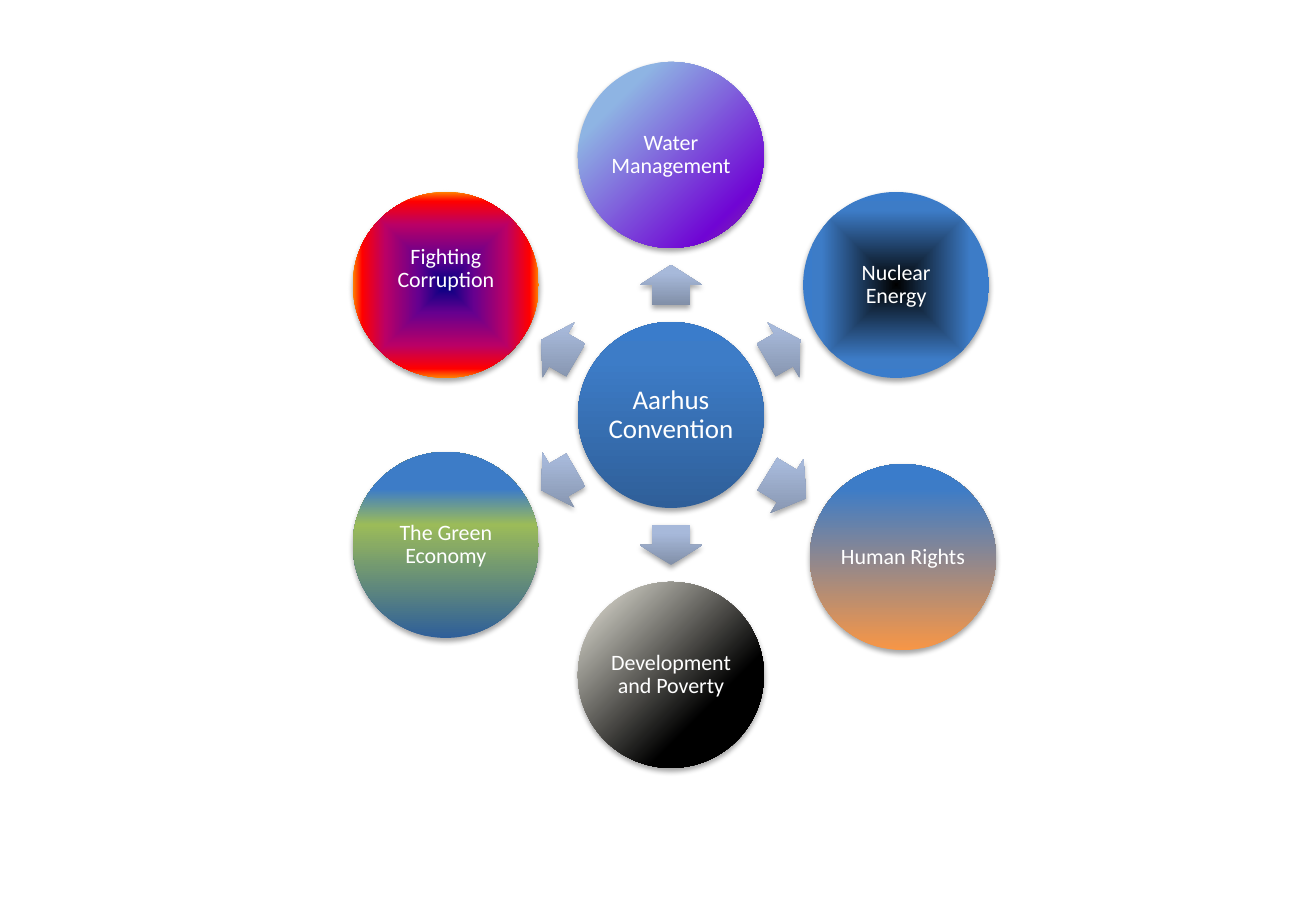
import math

import pptx
import pptx.dml.color
import pptx.enum.shapes
import pptx.enum.text
import pptx.oxml
import pptx.oxml.ns
import pptx.util

RGB = pptx.dml.color.RGBColor
SHAPES = pptx.enum.shapes.MSO_SHAPE
NS = pptx.oxml.ns.nsdecls("a")
PX = 914400 / 121.5

WHITE = RGB(0xFF, 0xFF, 0xFF)
BLACK = RGB(0x00, 0x00, 0x00)
DEEP_BLUE = RGB(0x2F, 0x5F, 0x99)
BLUE = RGB(0x3D, 0x7C, 0xC7)
BRIGHT_BLUE = RGB(0x3A, 0x7C, 0xCB)
SKY = RGB(0x8E, 0xB4, 0xE3)
VIOLET = RGB(0x70, 0x05, 0xD4)
PLUM = RGB(0x8C, 0x3D, 0x91)
ORANGE = RGB(0xF7, 0x96, 0x46)
CREAM = RGB(0xEE, 0xEC, 0xE1)
GREEN = RGB(0x9B, 0xBB, 0x59)
NAVY = RGB(0x00, 0x00, 0x82)
PURPLE = RGB(0x66, 0x00, 0x8F)
CRIMSON = RGB(0xBA, 0x00, 0x66)
RED = RGB(0xFF, 0x00, 0x00)
AMBER = RGB(0xFF, 0x82, 0x00)
SLATE = RGB(0x81, 0x8F, 0xA8)
MIST = RGB(0xA7, 0xB9, 0xDA)
PALE_MIST = RGB(0xA7, 0xBA, 0xDC)

HUB_X, HUB_Y = 671, 415
CIRCLE = 186
ARROW_HEIGHT = 63

LINEAR_UP = '<a:lin ang="16200000" scaled="0"/>'
DIAGONAL = '<a:lin ang="2700000" scaled="0"/>'
FROM_MIDDLE = ('<a:path path="shape"><a:fillToRect l="50000" t="50000" '
               'r="50000" b="50000"/></a:path>')

HUB_STOPS = [(0, DEEP_BLUE), (80, BLUE), (100, BRIGHT_BLUE)]
ARROW_STOPS = [(0, SLATE), (80, MIST), (100, PALE_MIST)]

TOPICS = [
    ("Water Management", 270, 260, DIAGONAL,
     [(21, SKY), (81, VIOLET), (98, PLUM)], 0),
    ("Nuclear Energy", 330, 260, FROM_MIDDLE,
     [(0, BLACK), (80, BLUE), (100, BRIGHT_BLUE)], 0),
    ("Human Rights", 31.5, 272, LINEAR_UP,
     [(0, ORANGE), (87, BLUE), (96, BRIGHT_BLUE)], 0),
    ("Development and Poverty", 90, 260, DIAGONAL,
     [(0, CREAM), (69, BLACK), (100, BLACK)], 0),
    ("The Green Economy", 150, 260, LINEAR_UP,
     [(0, DEEP_BLUE), (61, GREEN), (80, BLUE)], 0),
    ("Fighting Corruption", 210, 260, FROM_MIDDLE,
     [(0, NAVY), (30, PURPLE), (65, CRIMSON), (90, RED), (100, AMBER)], 32),
]

deck = pptx.Presentation()
deck.slide_width = round(1316 * PX)
deck.slide_height = round(911 * PX)
slide = deck.slides.add_slide(deck.slide_layouts[6])


def add_shaded(kind, angle, distance, width, height, stops, direction):
    x = HUB_X + distance * math.cos(math.radians(angle))
    y = HUB_Y + distance * math.sin(math.radians(angle))
    shape = slide.shapes.add_shape(
        kind, round((x - width / 2) * PX), round((y - height / 2) * PX),
        round(width * PX), round(height * PX))
    properties = shape._element.spPr
    stop_xml = "".join(
        f'<a:gs pos="{position * 1000}"><a:srgbClr val="{color}"/></a:gs>'
        for position, color in stops)
    properties.insert(2, pptx.oxml.parse_xml(
        f'<a:gradFill {NS} rotWithShape="0"><a:gsLst>{stop_xml}</a:gsLst>'
        f'{direction}</a:gradFill>'))
    shape.line.fill.background()
    shape.shadow.inherit = False
    properties.find(pptx.oxml.ns.qn("a:effectLst")).append(pptx.oxml.parse_xml(
        f'<a:outerShdw {NS} blurRad="40000" dist="23000" dir="5400000" '
        f'rotWithShape="0"><a:srgbClr val="{BLACK}"><a:alpha val="35000"/>'
        '</a:srgbClr></a:outerShdw>'))
    return shape


def add_circle(label, size, angle, distance, direction, stops, lift):
    circle = add_shaded(SHAPES.OVAL, angle, distance, CIRCLE, CIRCLE,
                        stops, direction)
    frame = circle.text_frame
    frame.word_wrap = True
    frame.vertical_anchor = pptx.enum.text.MSO_ANCHOR.MIDDLE
    frame.margin_left = frame.margin_right = frame.margin_top = round(2 * PX)
    frame.margin_bottom = round((2 + lift) * PX)
    paragraph = frame.paragraphs[0]
    paragraph.alignment = pptx.enum.text.PP_ALIGN.CENTER
    paragraph.line_spacing = 0.9
    run = paragraph.add_run()
    run.text = label
    run.font.name = "Calibri"
    run.font.size = pptx.util.Pt(size)
    run.font.color.rgb = WHITE


add_circle("Aarhus Convention", 16, 0, 0, LINEAR_UP, HUB_STOPS, 0)

for label, angle, distance, direction, stops, lift in TOPICS:
    arrow_length = round((distance - CIRCLE) * 0.54)
    arrow = add_shaded(SHAPES.RIGHT_ARROW, angle, distance / 2, arrow_length,
                       ARROW_HEIGHT, ARROW_STOPS, LINEAR_UP)
    arrow.adjustments[0] = 0.6
    arrow.adjustments[1] = 0.5
    arrow.rotation = angle
    add_circle(label, 13, angle, distance, direction, stops, lift)

deck.save("out.pptx")
